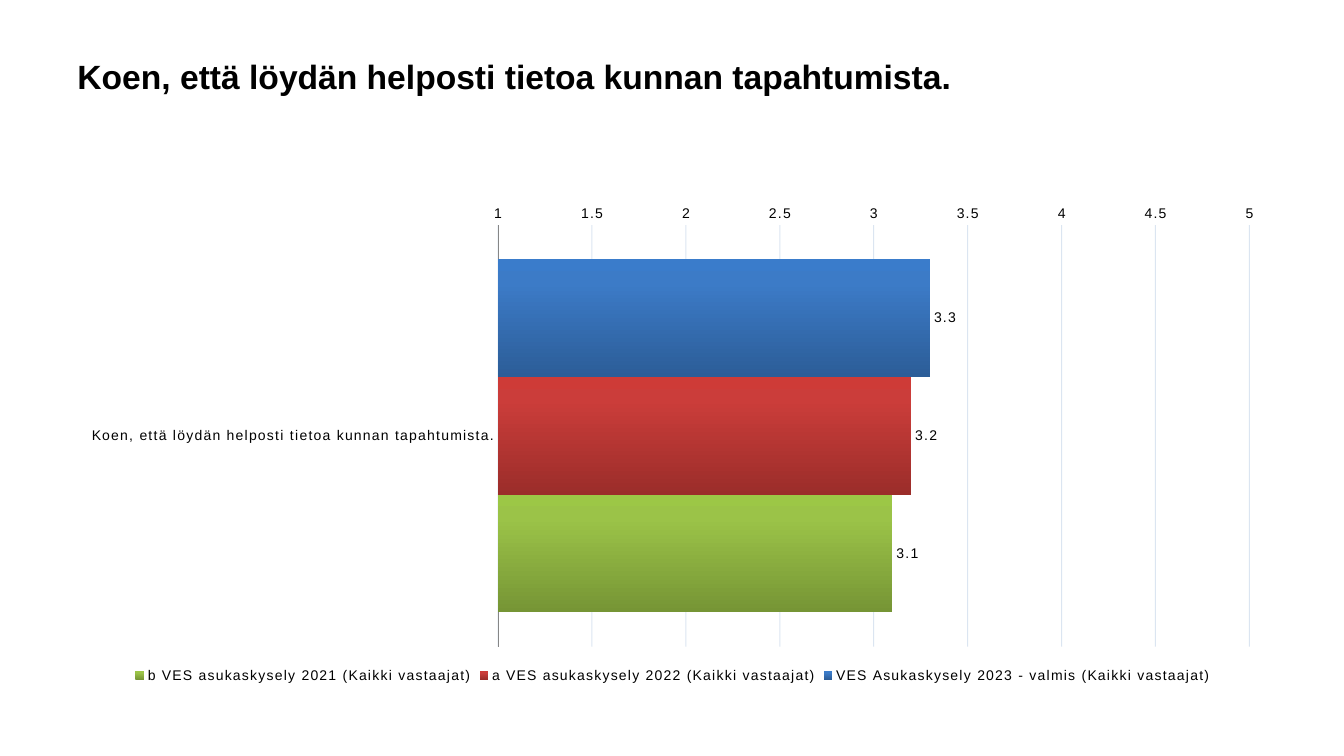
from pptx import Presentation, util as u
from pptx.chart.data import CategoryChartData
from pptx.dml.color import RGBColor
from pptx.enum import chart as ch, text as t
from pptx.oxml import parse_xml

NS = "http://schemas.openxmlformats.org/drawingml/2006/main"
TITLE = "Koen, että löydän helposti tietoa kunnan tapahtumista."
# name, value, gradient from bottom to top
ROWS = [
    ("VES Asukaskysely 2023 - valmis (Kaikki vastaajat)", 3.3,
     ("2C5D98", "3C7BC7", "3A7CCB")),
    ("a VES asukaskysely 2022 (Kaikki vastaajat)", 3.2,
     ("9B2D2A", "CB3D3A", "CE3B37")),
    ("b VES asukaskysely 2021 (Kaikki vastaajat)", 3.1,
     ("769535", "9BC348", "9CC746")),
]


def px(n):
    """Turn px, at 100 to the inch, into EMU."""
    return u.Emu(n * 9144)


def rgb(code):
    return RGBColor.from_string(code)


def shade(ser, tones):
    """Fill a series with a three-stop gradient running upwards."""
    stops = "".join(
        f'<a:gs pos="{pos}"><a:srgbClr val="{tone}"/></a:gs>'
        for pos, tone in zip((0, 80000, 100000), tones))
    ser._element.get_or_add_spPr().append(parse_xml(
        f'<a:gradFill xmlns:a="{NS}" rotWithShape="1"><a:gsLst>{stops}'
        '</a:gsLst><a:lin ang="16200000" scaled="0"/></a:gradFill>'))


class Deck:
    face = "Arial"
    ink = "000000"

    def __init__(self):
        self.prs = Presentation()
        self.prs.slide_width, self.prs.slide_height = px(1333), px(750)
        self.slide = self.prs.slides.add_slide(self.prs.slide_layouts[6])

    def style(self, font, size, bold=False):
        font.name, font.size, font.bold = self.face, u.Pt(size), bold
        font.color.rgb = rgb(self.ink)

    def small(self, font):
        """Style chart text, with letters spaced by one point."""
        self.style(font, 10)
        font._element.set("spc", "100")

    def title(self, words, *box):
        frame = self.slide.shapes.add_textbox(*map(px, box)).text_frame
        frame.word_wrap = True
        frame.vertical_anchor = t.MSO_ANCHOR.MIDDLE
        run = frame.paragraphs[0].add_run()
        run.text = words
        self.style(run.font, 24, True)

    def bars(self, cat, rows, *box):
        data = CategoryChartData()
        data.categories = [cat]
        for name, val, _ in rows:
            data.add_series(name, [val])
        chart = self.slide.shapes.add_chart(
            ch.XL_CHART_TYPE.BAR_CLUSTERED, *map(px, box), data).chart
        chart.has_title = False
        self.style(chart.font, 10)
        plot = chart.plots[0]
        plot.gap_width, plot.overlap = 58, 0
        plot.vary_by_categories = False
        for ser, (_, _, tones) in zip(plot.series, rows):
            shade(ser, tones)
            tags = ser.data_labels
            tags.show_value = True
            tags.position = ch.XL_LABEL_POSITION.OUTSIDE_END
            self.small(tags.font)
        self.axes(chart)
        chart.has_legend = True
        chart.legend.position = ch.XL_LEGEND_POSITION.BOTTOM
        chart.legend.include_in_layout = False
        self.small(chart.legend.font)

    def axes(self, chart):
        cat, val = chart.category_axis, chart.value_axis
        for axis in (cat, val):
            axis.major_tick_mark = axis.minor_tick_mark = ch.XL_TICK_MARK.NONE
            self.small(axis.tick_labels.font)
        cat.reverse_order = True
        cat.crosses = ch.XL_AXIS_CROSSES.MAXIMUM
        cat.format.line.color.rgb = rgb("868686")
        cat.format.line.width = u.Pt(0.75)
        val.minimum_scale, val.maximum_scale, val.major_unit = 1, 5, 0.5
        val.tick_labels.number_format = "General"
        val.tick_labels.number_format_is_linked = False
        val.format.line.fill.background()
        val.has_major_gridlines = True
        line = val.major_gridlines.format.line
        line.color.rgb, line.width = rgb("4F81BD"), u.Pt(0.75)
        tint = line._ln.find(f".//{{{NS}}}srgbClr")
        tint.append(parse_xml(f'<a:alpha xmlns:a="{NS}" val="20000"/>'))


def main():
    deck = Deck()
    deck.title(TITLE, 67, 36, 1200, 79)
    deck.bars(TITLE, ROWS, 67, 194, 1200, 488)
    deck.prs.save("out.pptx")


if __name__ == "__main__":
    main()
